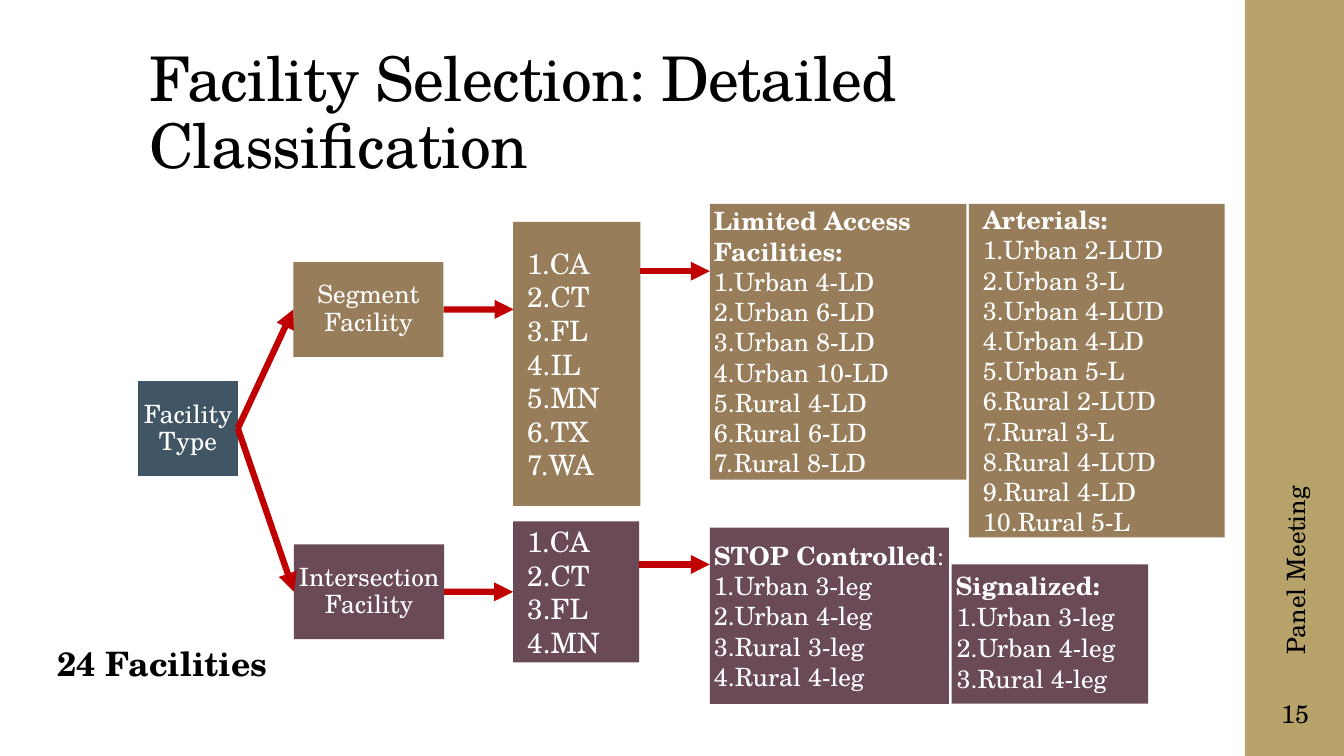
"""Build the facility classification slide."""
from lxml.etree import SubElement
from pptx import Presentation
from pptx.dml.color import RGBColor
from pptx.enum.shapes import MSO_CONNECTOR, MSO_SHAPE
from pptx.enum.text import MSO_ANCHOR as ANCHOR, PP_ALIGN as ALIGN
from pptx.oxml.ns import qn
from pptx.util import Pt

FONT = "TeX Gyre Schola"
BLACK, WHITE = RGBColor(0, 0, 0), RGBColor(255, 255, 255)
GOLD, BROWN = RGBColor(0xB7, 0xA3, 0x69), RGBColor(0x98, 0x7D, 0x5A)
PLUM, SLATE = RGBColor(0x6A, 0x4A, 0x57), RGBColor(0x41, 0x56, 0x65)
RED = RGBColor(0xC0, 0, 0)
INSET = 2.9

STEPS = {
    "type": ("Facility Type", (98.6, 272.2, 71.3, 67.7), SLATE),
    "segment": ("Segment Facility", (209.5, 187.2, 107.3, 67.7), BROWN),
    "intersection": ("Intersection Facility", (210, 388.8, 107.3, 67.7), PLUM),
}

LISTS = {
    "segment states": dict(
        box=(366.5, 158.4, 91, 203), color=BROWN, size=20, margin=14.4, hanging=7.2,
        items=["CA", "CT", "FL", "IL", "MN", "TX", "WA"]),
    "intersection states": dict(
        box=(366.5, 372.4, 90, 100.8), color=PLUM, size=20, margin=14.4, hanging=7.2,
        items=["CA", "CT", "FL", "MN"]),
    "limited": dict(
        box=(507, 145.6, 183.4, 197), color=BROWN, heading=[("Limited Access Facilities:", True)],
        items=["Urban 4-LD", "Urban 6-LD", "Urban 8-LD", "Urban 10-LD",
               "Rural 4-LD", "Rural 6-LD", "Rural 8-LD"]),
    "arterials": dict(
        box=(692, 145.6, 182.8, 238.4), color=BROWN, heading=[("Arterials:", True)],
        heading_margin=7.2, margin=14.4, hanging=7.2,
        items=["Urban 2-LUD", "Urban 3-L", "Urban 4-LUD", "Urban 4-LD", "Urban 5-L",
               "Rural 2-LUD", "Rural 3-L", "Rural 4-LUD", "Rural 4-LD", "Rural 5-L"]),
    "stop": dict(
        box=(507, 376.8, 170.8, 126), color=PLUM,
        heading=[("STOP Controlled", True), (":", False)],
        items=["Urban 3-leg", "Urban 4-leg", "Rural 3-leg", "Rural 4-leg"]),
    "signalized": dict(
        box=(679.7, 403.2, 140.4, 99.4), color=PLUM, heading=[("Signalized:", True)],
        margin=14.4, hanging=13.7, spacing=0.9, after=2.7,
        items=["Urban 3-leg", "Urban 4-leg", "Rural 4-leg"]),
}

ARROWS = [
    (("type", 3), ("segment", 1)),
    (("type", 3), ("intersection", 1)),
    (("intersection", 3), ("intersection states", 1)),
    (("segment", 3), (366.9, 221)),
    ((457.5, 193.7), (507, 193.7)),
    ((456.5, 403.2), (507, 403.2)),
]


def write(frame, text, size=18, color=BLACK, bold=False, align=ALIGN.LEFT, spacing=None,
          after=0, margin=0, hanging=None, tracking=None, first=True):
    """Add one paragraph; text is a string or a list of (text, bold) runs."""
    paragraph = frame.paragraphs[0] if first else frame.add_paragraph()
    paragraph.alignment = align
    paragraph.space_after = Pt(after)
    if spacing:
        paragraph.line_spacing = spacing
    properties = paragraph._p.get_or_add_pPr()
    properties.set("marL", str(Pt(margin)))
    if hanging is not None:
        properties.set("indent", str(-Pt(hanging)))
        SubElement(properties, qn("a:buAutoNum"), type="arabicPeriod")
    for words, heavy in [(text, bold)] if isinstance(text, str) else text:
        run = paragraph.add_run()
        run.text = words
        font = run.font
        font.name, font.size, font.bold = FONT, Pt(size), heavy
        font.color.rgb = color
        if tracking:
            run._r.get_or_add_rPr().set("spc", str(tracking))


def add_box(slide, box, color):
    """Add a filled rectangle without outline or shadow."""
    shape = slide.shapes.add_shape(MSO_SHAPE.RECTANGLE, *map(Pt, box))
    shape.shadow.inherit = False
    shape.fill.solid()
    shape.fill.fore_color.rgb = color
    shape.line.fill.background()
    set_frame(shape.text_frame, ANCHOR.MIDDLE, INSET)
    return shape


def set_frame(frame, anchor, inset=None):
    """Set wrapping, anchor and equal insets."""
    frame.word_wrap = True
    frame.vertical_anchor = anchor
    if inset is not None:
        frame.margin_left = frame.margin_right = Pt(inset)
        frame.margin_top = frame.margin_bottom = Pt(inset)


def add_label(slide, text, box, anchor=ANCHOR.MIDDLE, rotation=0, **style):
    """Add a text box."""
    shape = slide.shapes.add_textbox(*map(Pt, box))
    shape.rotation = rotation
    set_frame(shape.text_frame, anchor)
    write(shape.text_frame, text, **style)


def add_list(slide, box, color, items, heading=None, heading_margin=0, size=18,
             margin=14.4, hanging=14.4, spacing=None, after=0):
    """Add a box with an optional heading and a numbered list."""
    shape = add_box(slide, box, color)
    style = dict(size=size, color=WHITE, spacing=spacing, after=after)
    if heading:
        write(shape.text_frame, heading, margin=heading_margin, **style)
    for index, item in enumerate(items):
        write(shape.text_frame, item, margin=margin, hanging=hanging,
              first=index == 0 and not heading, **style)
    return shape


def add_arrow(slide, shapes, start, end):
    """Add an arrow; each end is a point or a (shape name, side) pair."""
    fixed = [(0, 0) if isinstance(place[0], str) else place for place in (start, end)]
    line = slide.shapes.add_connector(
        MSO_CONNECTOR.STRAIGHT, *(Pt(value) for point in fixed for value in point))
    for place, connect in ((start, line.begin_connect), (end, line.end_connect)):
        if isinstance(place[0], str):
            connect(shapes[place[0]], place[1])
    line.line.color.rgb = RED
    line.line.width = Pt(4.5)
    SubElement(line.line._get_or_add_ln(), qn("a:tailEnd"), type="triangle")
    SubElement(line._element.spPr, qn("a:effectLst"))


def main():
    """Assemble and save the slide."""
    presentation = Presentation()
    presentation.slide_width, presentation.slide_height = Pt(960), Pt(540)
    slide = presentation.slides.add_slide(presentation.slide_layouts[6])

    add_box(slide, (889.2, 0, 70.8, 540), GOLD)
    add_label(slide, "Facility Selection: Detailed Classification", (99.4, 28.8, 789.8, 104.4),
              anchor=ANCHOR.BOTTOM, size=44, spacing=0.9, tracking=-50)
    add_label(slide, "Panel Meeting", (784, 319, 282.2, 28.8), rotation=270)
    add_label(slide, "15", (889.2, 486, 72, 46.8), align=ALIGN.CENTER)

    shapes = {}
    for name, (text, box, color) in STEPS.items():
        shapes[name] = add_box(slide, box, color)
        write(shapes[name].text_frame, text, color=WHITE, align=ALIGN.CENTER, spacing=0.9)
    for name, content in LISTS.items():
        shapes[name] = add_list(slide, **content)
    for start, end in ARROWS:
        add_arrow(slide, shapes, start, end)

    add_label(slide, "24 Facilities", (33.8, 455.8, 176.4, 36), anchor=ANCHOR.TOP,
              size=24, bold=True)
    presentation.save("out.pptx")


if __name__ == "__main__":
    main()
